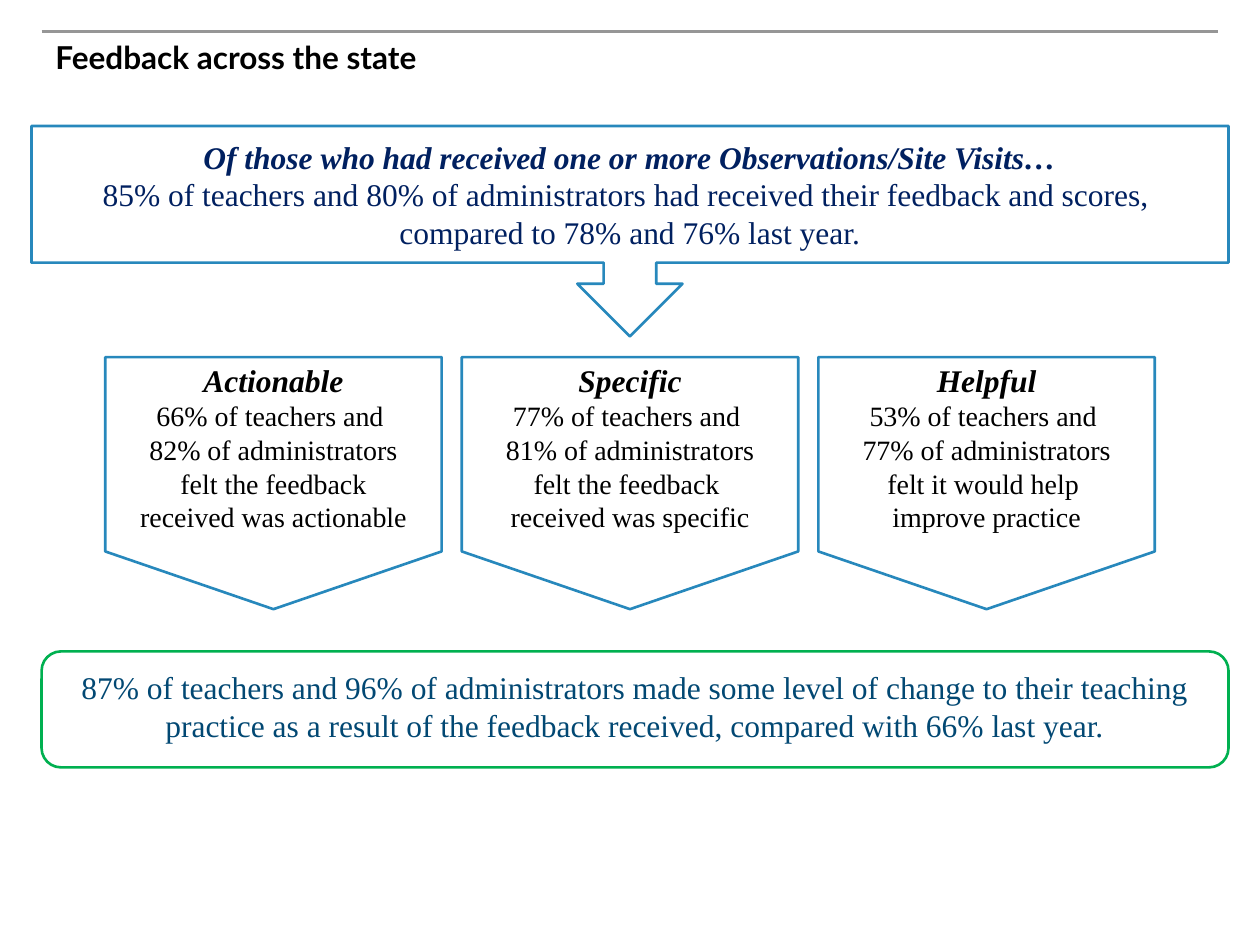
from dataclasses import dataclass

from pptx import Presentation
from pptx.dml.color import RGBColor
from pptx.enum.shapes import MSO_CONNECTOR, MSO_SHAPE
from pptx.enum.text import MSO_ANCHOR, PP_ALIGN
from pptx.oxml.ns import qn
from pptx.util import Inches, Pt
from lxml.etree import SubElement

BLACK = RGBColor(0x00, 0x00, 0x00)
GRAY = RGBColor(0x96, 0x96, 0x96)
BLUE = RGBColor(0x27, 0x88, 0xBC)
NAVY = RGBColor(0x00, 0x20, 0x60)
TEAL = RGBColor(0x02, 0x48, 0x73)
GREEN = RGBColor(0x00, 0xB0, 0x50)
SERIF = "Times New Roman"


@dataclass
class Finding:
    heading: str
    lines: list[str]


FINDINGS = [
    Finding("Actionable", ["66% of teachers and ", "82% of administrators",
                           "felt the feedback", "received was actionable"]),
    Finding("Specific", ["77% of teachers and ", "81% of administrators",
                         "felt the feedback ", "received was specific"]),
    Finding("Helpful", ["53% of teachers and ", "77% of administrators",
                        "felt it would help ", "improve practice"]),
]


def add_outline(page, kind, left: float, top: float, width: float, height: float,
                color: RGBColor):
    """Add an unfilled preset shape with a coloured outline."""
    shape = page.shapes.add_shape(kind, Inches(left), Inches(top),
                                  Inches(width), Inches(height))
    shape.shadow.inherit = False
    shape.fill.background()
    shape.line.color.rgb = color
    shape.line.width = Pt(1.5)
    return shape


def write_lines(frame, lines: list[str], color: RGBColor, size: int = 18,
                has_heading: bool = True) -> None:
    """Write centred lines, the first one as an 18 pt bold italic heading."""
    frame.text = "\n".join(lines)
    for index, paragraph in enumerate(frame.paragraphs):
        heading = has_heading and index == 0
        paragraph.alignment = PP_ALIGN.CENTER
        for span in paragraph.runs:
            span.font.name = SERIF
            span.font.size = Pt(18 if heading else size)
            span.font.bold = span.font.italic = heading
            span.font.color.rgb = color


def add_finding(page, finding: Finding, left: float) -> None:
    """Add a pentagon turned to point down, with upright text."""
    box = add_outline(page, MSO_SHAPE.PENTAGON, left, 2.5, 2, 2.67, BLUE)
    box.rotation = 90
    box.adjustments[0] = 0.229
    frame = box.text_frame
    frame.word_wrap = False
    frame.vertical_anchor = MSO_ANCHOR.MIDDLE
    frame.margin_right = Inches(0.39)  # lifts the text away from the point
    frame._txBody.bodyPr.set("vert", "vert270")
    write_lines(frame, [finding.heading, *finding.lines], BLACK, size=16)


def main() -> None:
    deck = Presentation()
    deck.slide_width, deck.slide_height = Inches(10), Inches(7.5)
    page = deck.slides.add_slide(deck.slide_layouts[5])

    # Rule and title
    rule = page.shapes.add_connector(MSO_CONNECTOR.STRAIGHT, Inches(0.33), Inches(0.25),
                                     Inches(9.67), Inches(0.25))
    rule.line.color.rgb = GRAY
    rule.line.width = Pt(2)
    SubElement(rule._element.spPr, qn("a:effectLst"))

    title = page.shapes.title
    title.left, title.top = Inches(0.34), Inches(0.25)
    title.width, title.height = Inches(9.32), Inches(0.92)
    title.text_frame.text = "Feedback across the state"
    title.text_frame.vertical_anchor = MSO_ANCHOR.TOP
    heading = title.text_frame.paragraphs[0]
    heading.alignment = PP_ALIGN.LEFT
    font = heading.runs[0].font
    font.name, font.size, font.bold = "Lato", Pt(18), True
    font.color.rgb = BLACK

    # Callout
    callout = add_outline(page, MSO_SHAPE.DOWN_ARROW_CALLOUT, 0.25, 1, 9.5, 1.67, BLUE)
    callout.text_frame.word_wrap = False
    callout.text_frame.vertical_anchor = MSO_ANCHOR.MIDDLE
    write_lines(callout.text_frame, [
        "Of those who had received one or more Observations/Site Visits…",
        "85% of teachers and 80% of administrators had received their feedback and scores, ",
        "compared to 78% and 76% last year."], NAVY)

    # Three findings
    for index, finding in enumerate(FINDINGS):
        add_finding(page, finding, 1.17 + index * 2.83)

    # Conclusion
    add_outline(page, MSO_SHAPE.ROUNDED_RECTANGLE, 0.33, 5.17, 9.42, 0.92, GREEN)
    conclusion = page.shapes.add_textbox(Inches(0.33), Inches(5.25), Inches(9.42), Inches(0.71))
    conclusion.text_frame.word_wrap = True
    write_lines(conclusion.text_frame, [
        "87% of teachers and 96% of administrators made some level of change to their "
        "teaching practice as a result of the feedback received, compared with 66% last year."],
        TEAL, has_heading=False)

    deck.save("out.pptx")


if __name__ == "__main__":
    main()
